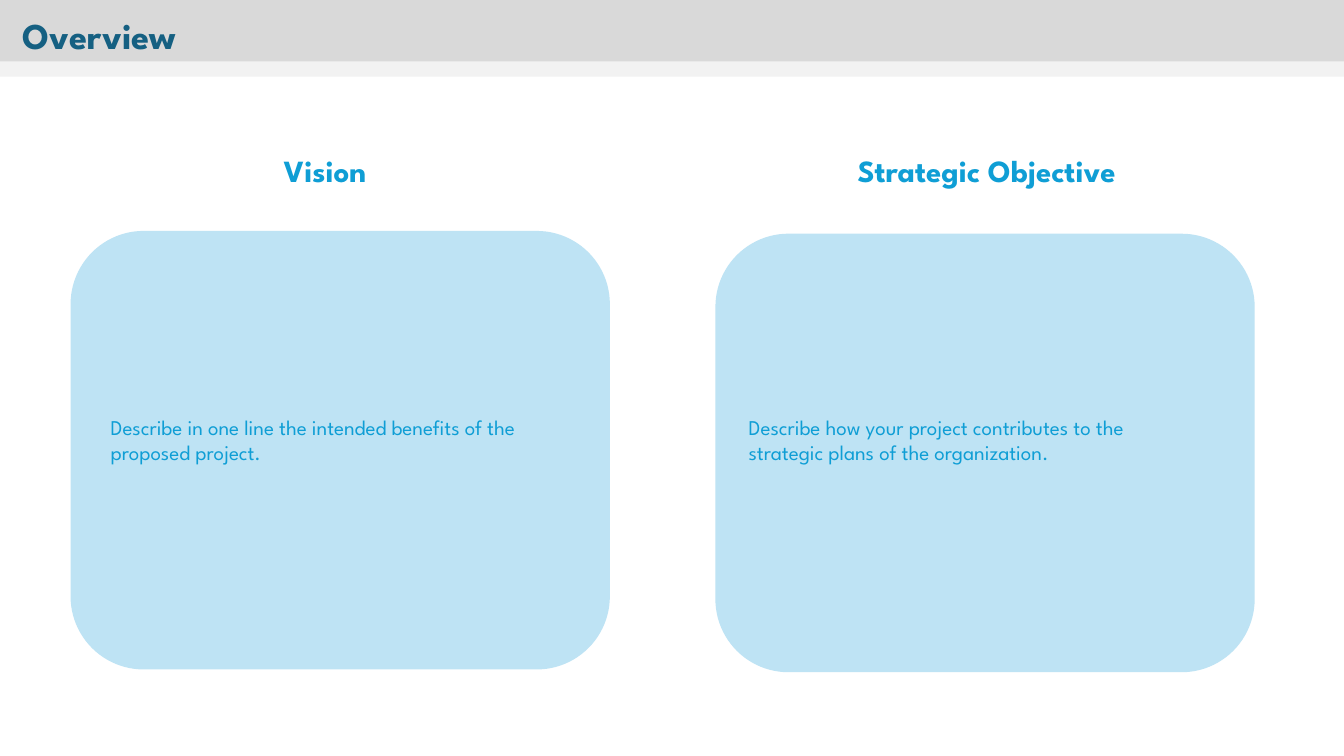
import pptx
import pptx.util
import pptx.dml.color
import pptx.enum.shapes
import pptx.enum.text

Cm = pptx.util.Cm
SHAPES = pptx.enum.shapes.MSO_SHAPE
ALIGN = pptx.enum.text.PP_ALIGN

THEME = {
    "font": "League Spartan",
    "colours": {"band": "D9D9D9", "strip": "F2F2F2", "card": "BEE3F4",
                "title": "156082", "accent": "0F9ED5"},
    "sizes": {"title": 26, "heading": 22, "body": 15},
}

presentation = pptx.Presentation()
presentation.slide_width = Cm(33.87)
presentation.slide_height = Cm(19.05)
slide = presentation.slides.add_slide(presentation.slide_layouts[6])


def add_block(kind, box, colour):
    shape = slide.shapes.add_shape(kind, *map(Cm, box))
    shape.shadow.inherit = False
    shape.fill.solid()
    shape.fill.fore_color.rgb = pptx.dml.color.RGBColor.from_string(THEME["colours"][colour])
    shape.line.fill.background()


def add_text(text, box, size, colour, bold=False, align=ALIGN.LEFT):
    frame = slide.shapes.add_textbox(*map(Cm, box)).text_frame
    frame.word_wrap = True
    frame.auto_size = pptx.enum.text.MSO_AUTO_SIZE.SHAPE_TO_FIT_TEXT
    paragraph = frame.paragraphs[0]
    paragraph.alignment = align
    run = paragraph.add_run()
    run.text = text
    font_format = {"name": THEME["font"], "bold": bold,
                   "size": pptx.util.Pt(THEME["sizes"][size])}
    for attribute, value in font_format.items():
        setattr(run.font, attribute, value)
    run.font.color.rgb = pptx.dml.color.RGBColor.from_string(THEME["colours"][colour])


# Title band
add_block(SHAPES.RECTANGLE, (0, 0, 33.87, 1.57), "band")
add_text("Overview", (0.33, 0.2, 23.29, 1.37), "title", "title", bold=True)
add_block(SHAPES.RECTANGLE, (0, 1.55, 33.87, 0.38), "strip")

# Columns: heading, its left and width, card left and top, body left, body
columns = [
    ("Vision", 4.14, 8.1, 1.78, 5.82, 2.54,
     "Describe in one line the intended benefits of the proposed project."),
    ("Strategic Objective", 18.11, 13.51, 18.03, 5.89, 18.62,
     "Describe how your project contributes to the strategic plans of the organization."),
]
for heading, heading_left, heading_width, card_left, card_top, body_left, body in columns:
    add_block(SHAPES.ROUNDED_RECTANGLE, (card_left, card_top, 13.59, 11.05), "card")
    add_text(heading, (heading_left, 3.71, heading_width, 1.19),
             "heading", "accent", bold=True, align=ALIGN.CENTER)
    add_text(body, (body_left, 10.31, 11.79, 1.55), "body", "accent")

presentation.save("out.pptx")
